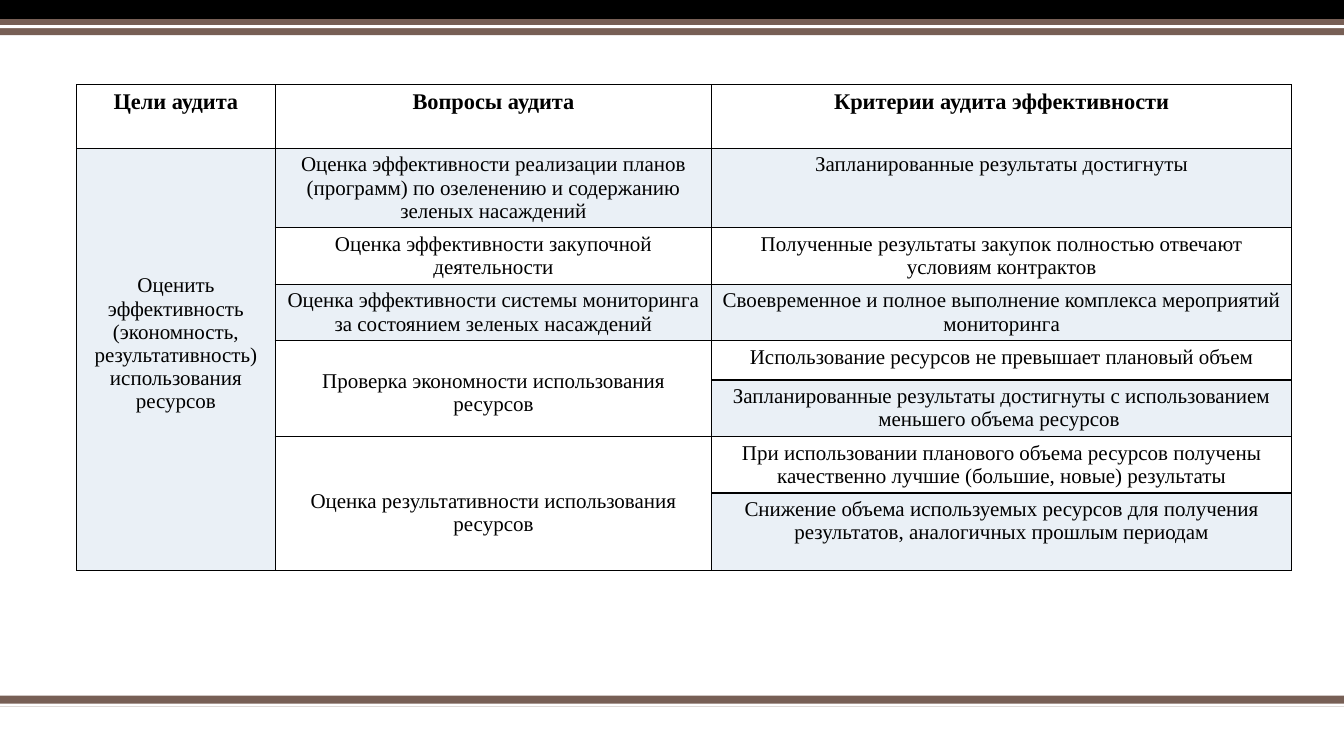
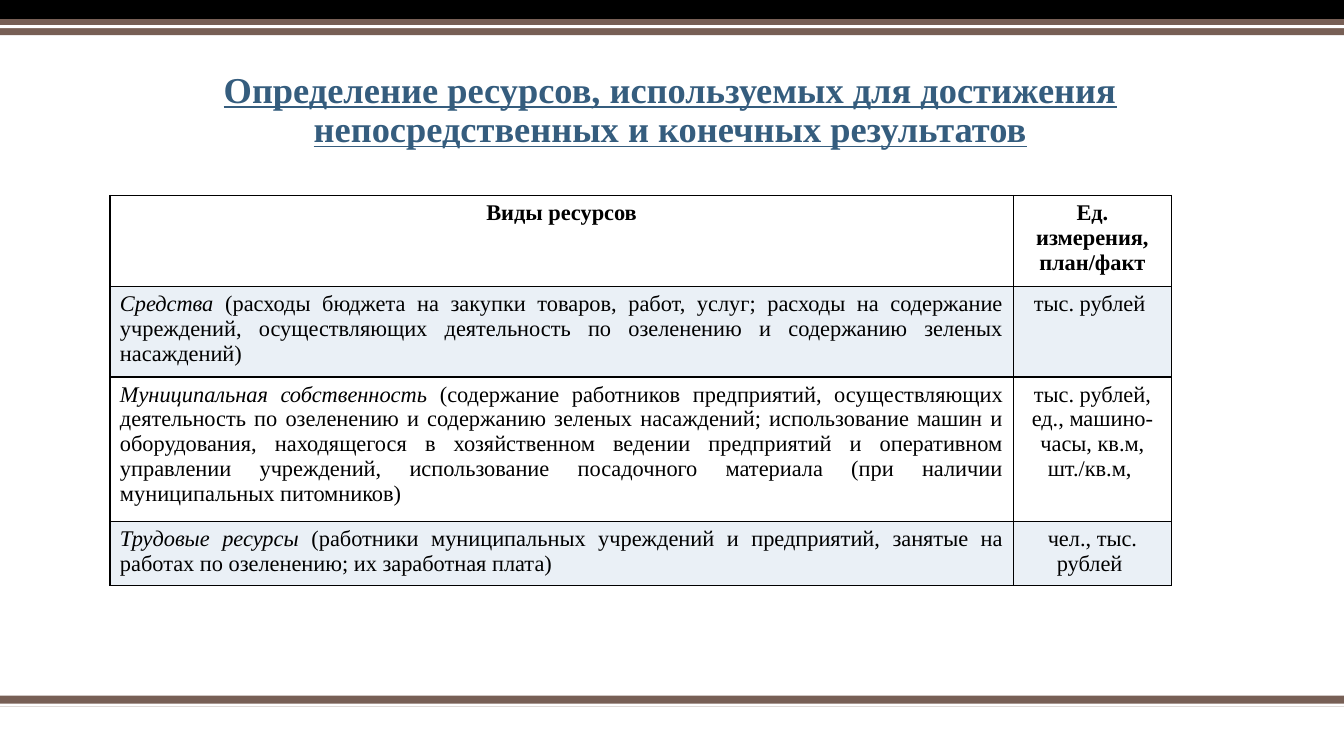
import pptx
import pptx.dml.color
import pptx.enum.shapes
import pptx.enum.text
import pptx.oxml
import pptx.oxml.ns
import pptx.util

SCALE = 9144  # EMU in one px, 100 px to the inch
COLORS = {"paper": "FFFFFF", "ink": "000000", "brown": "775F55",
          "title": "355D7E", "tint": "EAF0F6"}
FONT = "Times New Roman"
ALIGN = pptx.enum.text.PP_ALIGN

# Bands on every page: left, top, width, height, colour
BANDS = [
    (0, 690, 1333, 11, "brown"),
    (0, 698, 1333, 3, "paper"),
    (0, 0, 1333, 19, "ink"),
    (0, 19, 1333, 16, "brown"),
    (0, 25, 1333, 3, "paper"),
]


def px(length):
    return pptx.util.Emu(length * SCALE)


def rgb(name):
    return pptx.dml.color.RGBColor.from_string(COLORS[name])


class Slides:
    """Holds the style, the deck and the current page."""

    def __init__(self):
        self.deck = pptx.Presentation()
        self.deck.slide_width, self.deck.slide_height = px(1333), px(750)
        self.page = None

    def new_page(self):
        self.page = self.deck.slides.add_slide(self.deck.slide_layouts[6])
        for *place, color in BANDS:
            self.band(place, color)

    def band(self, place, color):
        kind = pptx.enum.shapes.MSO_SHAPE.RECTANGLE
        bar = self.page.shapes.add_shape(kind, *map(px, place))
        bar.shadow.inherit = False
        bar.fill.solid()
        bar.fill.fore_color.rgb = rgb(color)
        bar.line.fill.background()

    def span(self, para, text, color="ink", **formats):
        span = para.add_run()
        span.text = text
        span.font.color.rgb = rgb(color)
        for name, value in {"name": FONT, **formats}.items():
            setattr(span.font, name, value)

    def title(self, place, lines):
        box = self.page.shapes.add_textbox(*map(px, place))
        frame = box.text_frame
        frame.word_wrap = True
        frame.vertical_anchor = pptx.enum.text.MSO_ANCHOR.BOTTOM
        para = frame.paragraphs[0]
        para.alignment, para.line_spacing = ALIGN.CENTER, 0.9
        for index, line in enumerate(lines):
            if index:
                para.add_line_break()
            self.span(para, line, "title", size=pptx.util.Pt(26),
                      bold=True, underline=True)

    def borders(self, cell):
        properties = cell._tc.get_or_add_tcPr()
        for side in ("lnL", "lnR", "lnT", "lnB"):
            properties.append(pptx.oxml.parse_xml(
                f'<a:{side} {pptx.oxml.ns.nsdecls("a")} w="12700"><a:solidFill>'
                f'<a:srgbClr val="{COLORS["ink"]}"/></a:solidFill></a:{side}>'))

    def cell(self, cell, content, header, shaded, size):
        self.borders(cell)
        if shaded:
            cell.fill.solid()
            cell.fill.fore_color.rgb = rgb("tint")
        else:
            cell.fill.background()
        if content is None:
            return
        para = cell.text_frame.paragraphs[0]
        size = pptx.util.Pt(size)
        if isinstance(content, tuple):  # italic lead, then plain text
            para.alignment = ALIGN.JUSTIFY
            lead, content = content
            self.span(para, lead, size=size, bold=False, italic=True)
        else:
            para.alignment = ALIGN.CENTER
        self.span(para, content, size=size, bold=header, italic=False)

    def table(self, left, top, columns, heights, rows, body_size, merges=()):
        """Merges: row, column, rows spanned, top margin of the text."""
        frame = self.page.shapes.add_table(
            len(rows), len(columns), px(left), px(top),
            px(sum(columns)), px(sum(heights)))
        table = frame.table
        table.first_row = table.horz_banding = False
        for column, width in zip(table.columns, columns):
            column.width = px(width)
        for row, height in zip(table.rows, heights):
            row.height = px(height)
        for r, row in enumerate(rows):
            for c, content in enumerate(row):
                self.cell(table.cell(r, c), content, r == 0, r % 2 == 1,
                          body_size if r else 16)
        for r, c, count, margin in merges:
            table.cell(r, c).merge(table.cell(r + count - 1, c))
            table.cell(r, c).margin_top = px(margin)


AUDIT_ROWS = [
    ["Цели аудита", "Вопросы аудита", "Критерии аудита эффективности"],
    ["Оценить эффективность (экономность, результативность) "
     "использования ресурсов",
     "Оценка эффективности реализации планов (программ) по озеленению "
     "и содержанию зеленых насаждений",
     "Запланированные результаты достигнуты"],
    [None, "Оценка эффективности закупочной деятельности",
     "Полученные результаты закупок полностью отвечают условиям контрактов"],
    [None, "Оценка эффективности системы мониторинга за состоянием "
     "зеленых насаждений",
     "Своевременное и полное выполнение комплекса мероприятий мониторинга"],
    [None, "Проверка экономности использования ресурсов",
     "Использование ресурсов не превышает плановый объем"],
    [None, None, "Запланированные результаты достигнуты с использованием "
     "меньшего объема ресурсов "],
    [None, "Оценка результативности использования ресурсов",
     "При использовании планового объема ресурсов получены качественно "
     "лучшие (большие, новые) результаты"],
    [None, None, "Снижение объема используемых ресурсов для получения "
     "результатов, аналогичных прошлым периодам"],
]

RESOURCE_ROWS = [
    ["Виды ресурсов", "Ед. измерения, план/факт"],
    [("Средства ", "(расходы бюджета на закупки товаров, работ, услуг; "
      "расходы на содержание учреждений, осуществляющих деятельность по "
      "озеленению и содержанию зеленых насаждений)"),
     "тыс. рублей "],
    [("Муниципальная собственность ", "(содержание работников предприятий, "
      "осуществляющих деятельность по озеленению и содержанию зеленых "
      "насаждений; использование машин и оборудования, находящегося в "
      "хозяйственном ведении предприятий и оперативном управлении "
      "учреждений, использование посадочного материала (при наличии "
      "муниципальных питомников) "),
     "тыс. рублей, ед., машино-часы, кв.м, шт./кв.м, "],
    [("Трудовые ресурсы ", "(работники муниципальных учреждений и "
      "предприятий, занятые на работах по озеленению; их заработная плата)"),
     "чел., тыс. рублей "],
]


def main():
    slides = Slides()

    # Audit goals, questions and criteria
    slides.new_page()
    slides.table(76, 84, [197, 433, 575], [63, 79, 56, 56, 39, 56, 56, 77],
                 AUDIT_ROWS, 15,
                 merges=[(1, 0, 7, 125), (4, 1, 2, 29), (6, 1, 2, 53)])

    # Resources and their units
    slides.new_page()
    slides.title((167, 45, 996, 109),
                 ["Определение ресурсов, используемых для достижения",
                  "непосредственных и конечных результатов"])
    slides.table(109, 194, [896, 157], [84, 84, 134, 60], RESOURCE_ROWS, 16)

    slides.deck.save("out.pptx")


if __name__ == "__main__":
    main()
